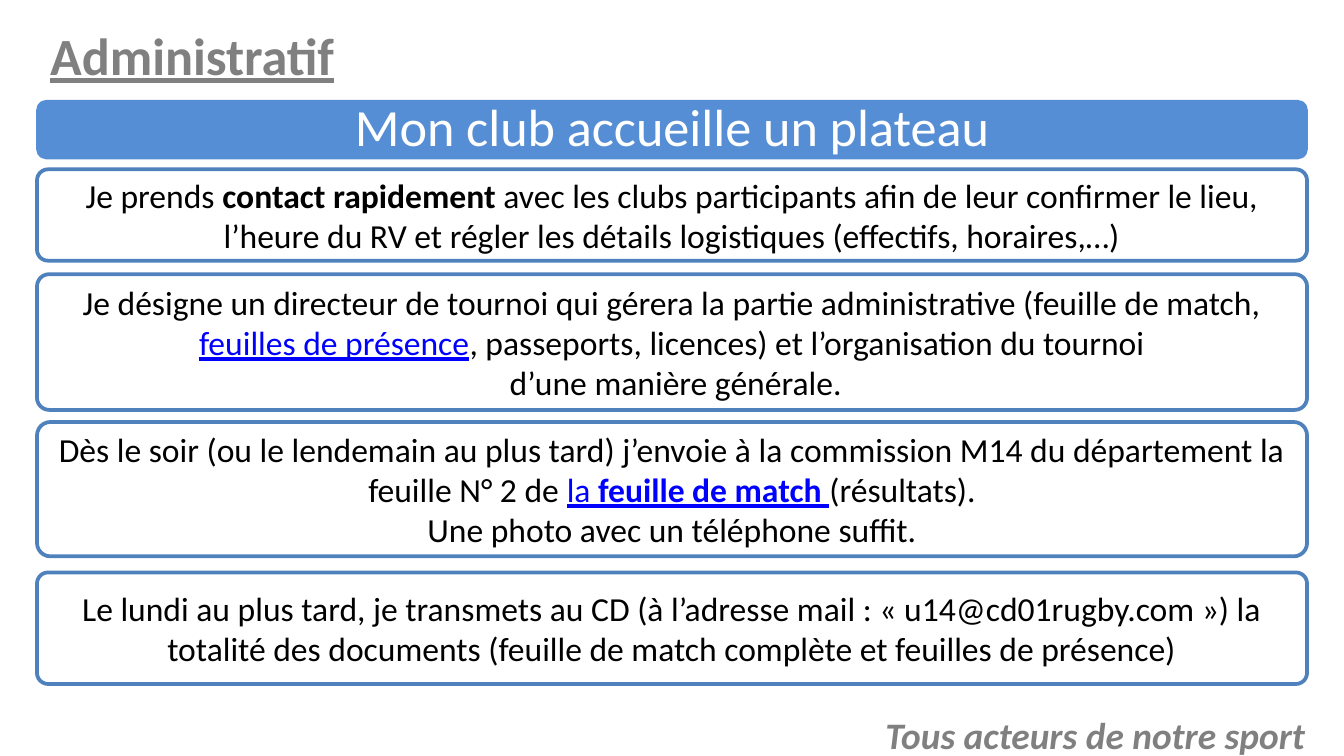
from pptx import Presentation
from pptx.dml.color import RGBColor
from pptx.enum import shapes, text
from pptx.util import Inches, Pt

GREY, BLACK, WHITE = "808080", "000000", "FFFFFF"
BANNER_BLUE, BORDER_BLUE, LINK_BLUE = "558ED5", "4F81BD", "0000FF"
SLIDE_WIDTH, WIDTH = 10, 9.45
LEFT = (SLIDE_WIDTH - WIDTH) / 2

BODY = {"name": "Calibri", "size": Pt(18)}
HEADING = {"name": "Calibri", "size": Pt(28)}
TITLE = {**HEADING, "bold": True, "underline": True}
MOTTO = {"name": "Calibri", "size": Pt(20), "bold": True, "italic": True}
BOLD = {"bold": True}
LINK = {"underline": True, "color": LINK_BLUE}


def write(frame, paragraphs, style, color, align=text.PP_ALIGN.CENTER):
    """Fill a text frame; each paragraph is a list of (wording, extra format) runs."""
    frame.word_wrap = True
    frame.vertical_anchor = text.MSO_ANCHOR.MIDDLE
    for index, runs in enumerate(paragraphs):
        paragraph = frame.paragraphs[0] if index == 0 else frame.add_paragraph()
        paragraph.alignment = align
        for wording, extra in runs:
            run = paragraph.add_run()
            run.text = wording
            values = {"color": color, **style, **extra}
            run.font.color.rgb = RGBColor.from_string(values.pop("color"))
            for attribute, value in values.items():
                setattr(run.font, attribute, value)


def add_panel(top, height, radius, fill, border, border_width):
    panel = slide.shapes.add_shape(
        shapes.MSO_SHAPE.ROUNDED_RECTANGLE,
        Inches(LEFT), Inches(top), Inches(WIDTH), Inches(height))
    panel.adjustments[0] = radius
    panel.shadow.inherit = False
    panel.fill.solid()
    panel.fill.fore_color.rgb = RGBColor.from_string(fill)
    panel.line.color.rgb = RGBColor.from_string(border)
    panel.line.width = Pt(border_width)
    return panel.text_frame


prs = Presentation()
prs.slide_width = Inches(SLIDE_WIDTH)
prs.slide_height = Inches(SLIDE_WIDTH * 9 / 16)
slide = prs.slides.add_slide(prs.slide_layouts[6])

# Banner
banner = add_panel(0.75, 0.43, 0.17, BANNER_BLUE, BANNER_BLUE, 1)
for side in ("left", "top", "right", "bottom"):
    setattr(banner, f"margin_{side}", Inches(0.08))
write(banner, [[("Mon club accueille un plateau", {})]], HEADING, WHITE)
banner.paragraphs[0].line_spacing = 0.9

# Steps: top, height, corner radius, paragraphs
steps = [
    (1.26, 0.68, 0.12, [
        [("Je prends ", {}),
         ("contact rapidement ", BOLD),
         ("avec les clubs participants afin de leur confirmer le lieu, l’heure du RV "
          "et régler les détails logistiques (effectifs, horaires,…)", {})]]),
    (2.04, 1.01, 0.09, [
        [("Je désigne un directeur de tournoi qui gérera la partie administrative "
          "(feuille de match, ", {}),
         ("feuilles de présence", LINK),
         (", passeports, licences) et l’organisation du tournoi", {})],
        [(" d’une manière générale.", {})]]),
    (3.14, 1.0, 0.1, [
        [("Dès le soir (ou le lendemain au plus tard) j’envoie à la commission M14 "
          "du département la feuille N° 2 de ", {}),
         ("la ", LINK),
         ("feuille de match ", {**LINK, **BOLD}),
         ("(résultats).", {})],
        [("Une photo avec un téléphone suffit.", {})]]),
    (4.26, 0.83, 0.1, [
        [("Le lundi au plus tard, je transmets au CD (à l’adresse mail : "
          "« u14@cd01rugby.com ») la totalité des documents "
          "(feuille de match complète et feuilles de présence)", {})]]),
]
for top, height, radius, paragraphs in steps:
    write(add_panel(top, height, radius, WHITE, BORDER_BLUE, 2), paragraphs, BODY, BLACK)

# Motto
motto = slide.shapes.add_textbox(Inches(6.42), Inches(5.25), Inches(3.46), Inches(0.37))
write(motto.text_frame, [[("Tous acteurs de notre sport", {})]], MOTTO, GREY)
motto.text_frame.vertical_anchor = text.MSO_ANCHOR.TOP

# Title
title = slide.shapes.add_textbox(Inches(LEFT), Inches(0.14), Inches(WIDTH), Inches(0.53))
write(title.text_frame, [[("Administratif", {})]], TITLE, GREY, text.PP_ALIGN.LEFT)

prs.save("out.pptx")
